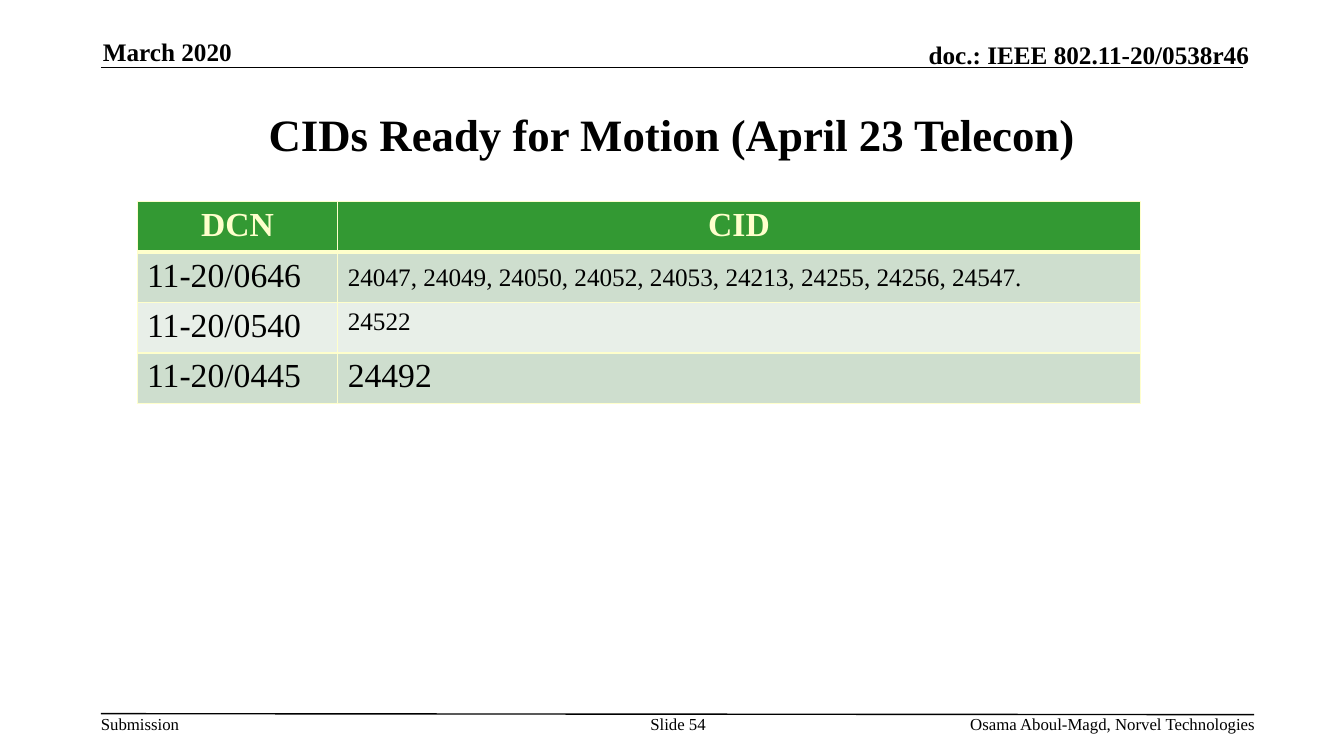
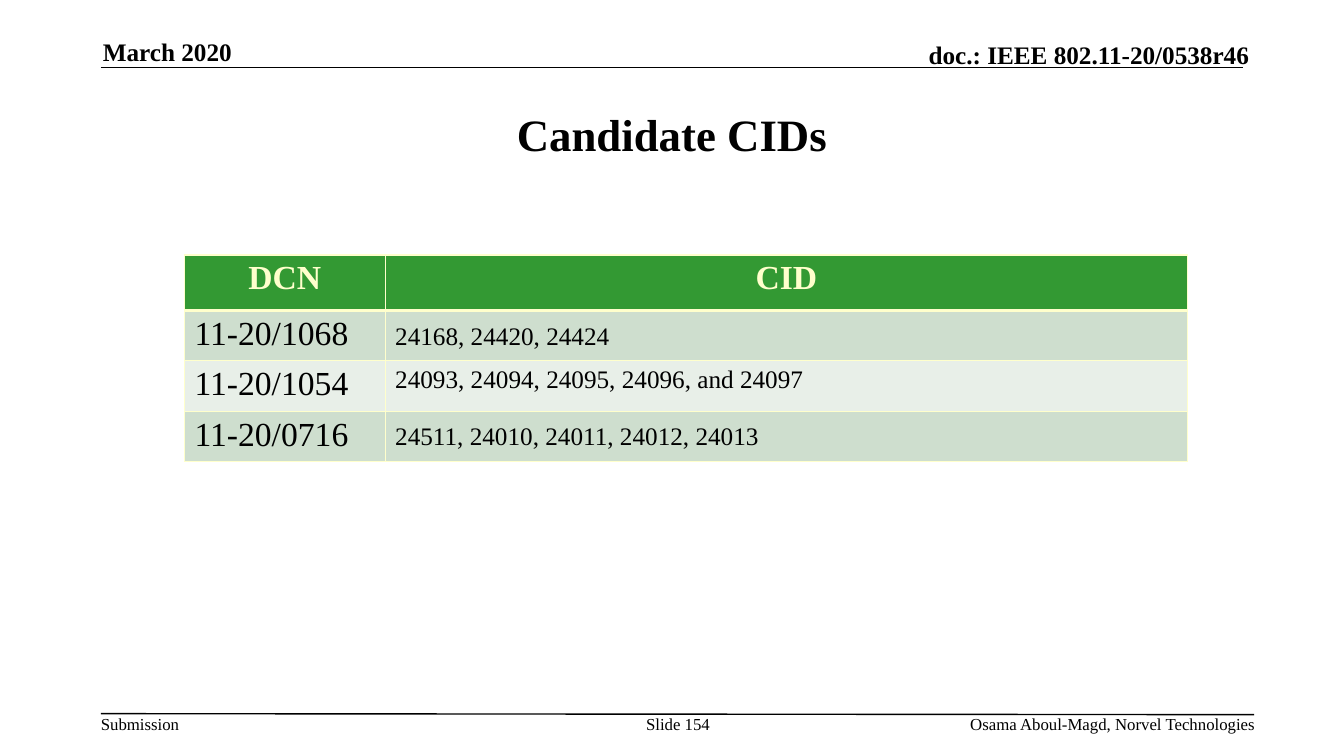
"""Build two slides listing comment identifiers by document number."""
from lxml.etree import SubElement
from pptx import Presentation
from pptx.dml.color import RGBColor
from pptx.enum.shapes import MSO_CONNECTOR
from pptx.enum.text import MSO_ANCHOR, PP_ALIGN
from pptx.oxml.ns import qn
from pptx.util import Inches, Pt

FONT = "Times New Roman"
BLACK = RGBColor(0x00, 0x00, 0x00)
CREAM = RGBColor(0xFF, 0xFF, 0xCC)
GREEN = RGBColor(0x33, 0x99, 0x33)
BANDS = (RGBColor(0xCE, 0xDE, 0xCE), RGBColor(0xE8, 0xEF, 0xE8))

COLUMN_WIDTHS = (1.99, 7.96)
ROW_HEIGHT = 0.41
LOWERED_TOP = 0.12
HEADINGS = ("DCN", "CID")


def style(paragraph, size, color=BLACK, bold=False, align=PP_ALIGN.LEFT):
    """Set the font and alignment of a paragraph."""
    paragraph.alignment = align
    font = paragraph.font
    font.name, font.size, font.bold = FONT, Pt(size), bold
    font.color.rgb = color


def add_text(slide, text, box, size, bold=False, align=PP_ALIGN.LEFT,
             anchor=MSO_ANCHOR.TOP, wrap=True):
    """Add a text box without insets."""
    frame = slide.shapes.add_textbox(*map(Inches, box)).text_frame
    frame.margin_left = frame.margin_right = 0
    frame.margin_top = frame.margin_bottom = 0
    frame.word_wrap = wrap
    frame.vertical_anchor = anchor
    frame.text = text
    style(frame.paragraphs[0], size, bold=bold, align=align)


def add_rule(slide, start, end):
    """Add a thin black line."""
    rule = slide.shapes.add_connector(
        MSO_CONNECTOR.STRAIGHT, *map(Inches, start + end))
    rule.line.color.rgb = BLACK
    rule.line.width = Pt(1)
    SubElement(rule.element.spPr, qn("a:effectLst"))


def set_borders(cell, top, bottom):
    """Draw cream borders around a cell, with widths in points."""
    properties = cell._tc.get_or_add_tcPr()
    for side, width in (("L", 1), ("R", 1), ("T", top), ("B", bottom)):
        border = SubElement(properties, qn(f"a:ln{side}"), w=str(Pt(width)))
        fill = SubElement(border, qn("a:solidFill"))
        SubElement(fill, qn("a:srgbClr"), val=str(CREAM))


def fill_cell(cell, text, fill, top=1, bottom=1, **font):
    """Write one table cell with its borders and fill."""
    set_borders(cell, top, bottom)
    cell.fill.solid()
    cell.fill.fore_color.rgb = fill
    cell.text = text
    style(cell.text_frame.paragraphs[0], **font)


def add_cid_table(slide, left, top, header_height, entries):
    """Add a table of (document, identifiers, size, lowered) entries."""
    heights = [header_height] + [ROW_HEIGHT] * len(entries)
    table = slide.shapes.add_table(
        len(heights), len(HEADINGS), Inches(left), Inches(top),
        Inches(sum(COLUMN_WIDTHS)), Inches(sum(heights))).table
    for column, width in zip(table.columns, COLUMN_WIDTHS):
        column.width = Inches(width)
    for row, height in zip(table.rows, heights):
        row.height = Inches(height)
    for column, heading in enumerate(HEADINGS):
        fill_cell(table.cell(0, column), heading, GREEN, bottom=3, size=24,
                  color=CREAM, bold=True, align=PP_ALIGN.CENTER)
    for row, (document, identifiers, size, lowered) in enumerate(entries, 1):
        band = BANDS[(row - 1) % 2]
        top_border = 3 if row == 1 else 1
        fill_cell(table.cell(row, 0), document, band, top_border, size=24)
        cid_cell = table.cell(row, 1)
        fill_cell(cid_cell, identifiers, band, top_border, size=size)
        if lowered:
            cid_cell.margin_top = Inches(LOWERED_TOP)


def add_page(deck, title, number):
    """Add a slide with the shared header, title and footer."""
    slide = deck.slides.add_slide(deck.slide_layouts[6])
    add_rule(slide, (1, 0.67), (12.33, 0.67))
    add_rule(slide, (1, 7.08), (12.44, 7.09))
    add_text(slide, "March 2020", (1.02, 0.36, 2.73, 0.3), 18, bold=True,
             anchor=MSO_ANCHOR.BOTTOM)
    add_text(slide, "doc.: IEEE 802.11-20/0538r46", (7.29, 0.39, 5.1, 0.3), 18,
             bold=True, align=PP_ALIGN.RIGHT, anchor=MSO_ANCHOR.BOTTOM)
    add_text(slide, title, (1, 0.75, 11.33, 1.16), 32, bold=True,
             align=PP_ALIGN.CENTER, anchor=MSO_ANCHOR.MIDDLE)
    add_text(slide, "Submission", (1, 7.08, 0.79, 0.2), 12, wrap=False)
    add_text(slide, f"Slide {number}", (6.34, 7.08, 0.77, 0.4), 12,
             align=PP_ALIGN.CENTER)
    add_text(slide, "Osama Aboul-Magd, Norvel Technologies",
             (7.81, 7.08, 4.64, 0.2), 12, align=PP_ALIGN.RIGHT)
    return slide


def main():
    """Build and save the presentation."""
    deck = Presentation()
    deck.slide_width, deck.slide_height = Inches(13.33), Inches(7.5)

    ready = add_page(deck, "CIDs Ready for Motion (April 23 Telecon)", 54)
    add_cid_table(ready, 1.36, 2, ROW_HEIGHT, [
        ("11-20/0646",
         "24047, 24049, 24050, 24052, 24053, 24213, 24255, 24256, 24547.",
         18, True),
        ("11-20/0540", "24522", 18, False),
        ("11-20/0445", "24492", 24, False),
    ])

    candidates = add_page(deck, "Candidate CIDs", 154)
    add_cid_table(candidates, 1.83, 2.53, 0.55, [
        ("11-20/1068", "24168, 24420, 24424", 18, True),
        ("11-20/1054", "24093, 24094, 24095, 24096, and 24097", 18, False),
        ("11-20/0716", "24511, 24010, 24011, 24012, 24013", 18, True),
    ])

    deck.save("out.pptx")


if __name__ == "__main__":
    main()
